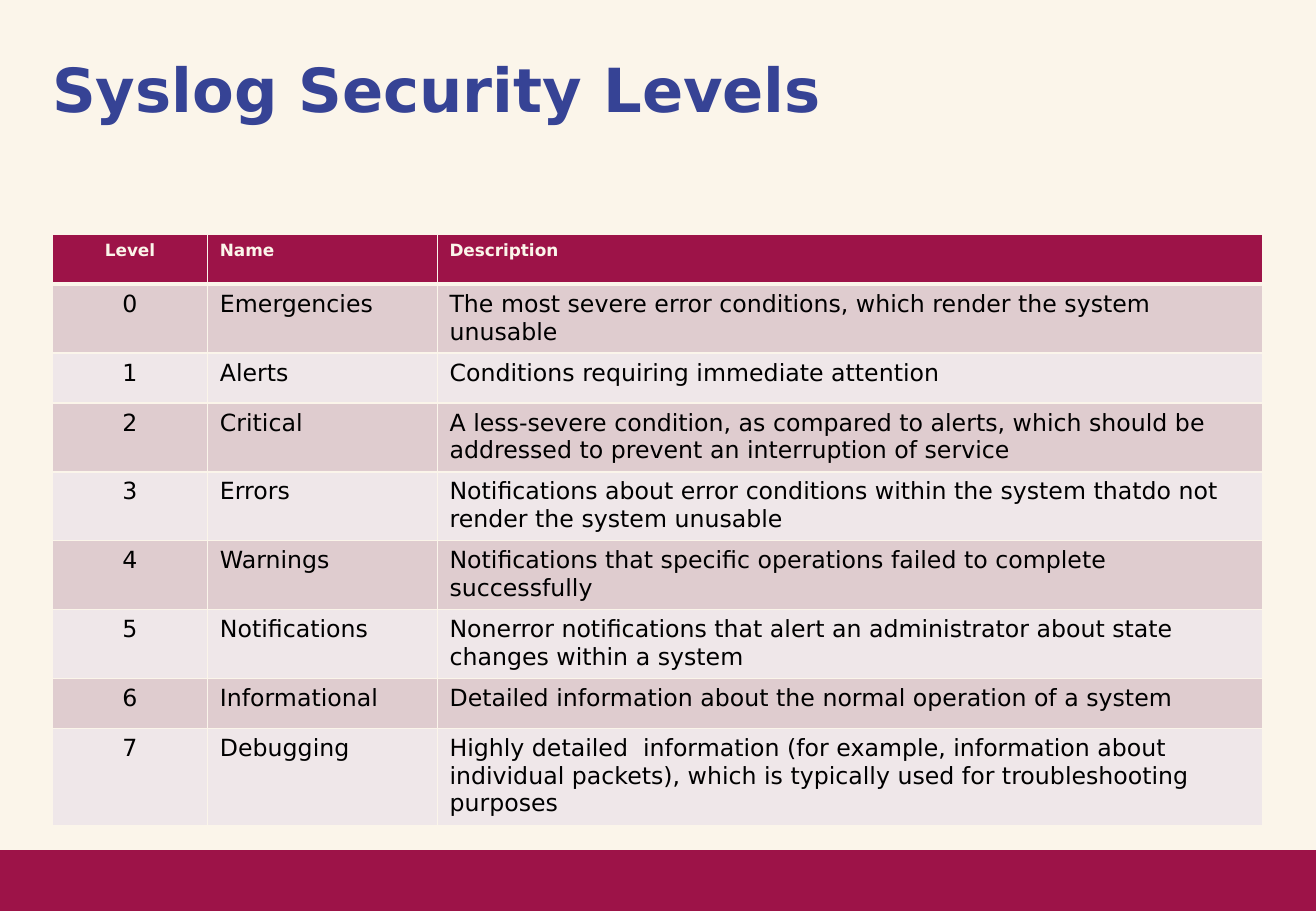
from pptx import Presentation
from pptx.dml.color import RGBColor
from pptx.enum.shapes import MSO_SHAPE
from pptx.enum.text import MSO_ANCHOR, PP_ALIGN
from pptx.oxml.ns import qn
from pptx.util import Inches, Pt
from lxml import etree

RECT = MSO_SHAPE.RECTANGLE
TOP = MSO_ANCHOR.TOP
LEFT, CENTER = PP_ALIGN.LEFT, PP_ALIGN.CENTER

CREAM = RGBColor(0xFB, 0xF5, 0xEA)
WINE = RGBColor(0x9D, 0x13, 0x48)
BLUE = RGBColor(0x36, 0x43, 0x95)
BLACK = RGBColor(0, 0, 0)
ROSE = RGBColor(0xDF, 0xCC, 0xCF)
PALE = RGBColor(0xEF, 0xE7, 0xE9)

WIDTHS = (1.28, 1.89, 6.79)
ROW = 0.41
HEADS = ("Level", "Name", "Description")
LEVELS = (
    ("Emergencies", "The most severe error conditions, which render the system unusable"),
    ("Alerts", "Conditions requiring immediate attention"),
    ("Critical", "A less-severe condition, as compared to alerts, which should be "
                 "addressed to prevent an interruption of service"),
    ("Errors", "Notifications about error conditions within the system thatdo not "
               "render the system unusable"),
    ("Warnings", "Notifications that specific operations failed to complete successfully"),
    ("Notifications", "Nonerror notifications that alert an administrator about state "
                      "changes within a system"),
    ("Informational", "Detailed information about the normal operation of a system"),
    ("Debugging", "Highly detailed  information (for example, information about "
                  "individual packets), which is typically used for troubleshooting purposes"),
)


class Deck:
    font = "DejaVu Sans"

    def __init__(self, wide, high):
        self.prs = Presentation()
        self.prs.slide_width = Inches(wide)
        self.prs.slide_height = Inches(high)
        self.slide = self.prs.slides.add_slide(self.prs.slide_layouts[6])
        fill = self.slide.background.fill
        fill.solid()
        fill.fore_color.rgb = CREAM

    def label(self, frame, text, size, color, bold=False, align=LEFT):
        frame.text = text
        para = frame.paragraphs[0]
        para.alignment = align
        font = para.runs[0].font
        font.name = self.font
        font.size = Pt(size)
        font.bold = bold
        font.color.rgb = color

    def bar(self, x, y, w, h, color):
        shape = self.slide.shapes.add_shape(RECT, Inches(x), Inches(y), Inches(w), Inches(h))
        shape.shadow.inherit = False
        shape.fill.solid()
        shape.fill.fore_color.rgb = color
        shape.line.fill.background()

    def title(self, x, y, w, h, text):
        box = self.slide.shapes.add_textbox(Inches(x), Inches(y), Inches(w), Inches(h))
        frame = box.text_frame
        frame.word_wrap = True
        frame.vertical_anchor = TOP
        frame.margin_left = frame.margin_right = 0
        frame.margin_top = frame.margin_bottom = 0
        self.label(frame, text, 36, BLUE, bold=True)

    def edge(self, cell, tag, width):
        props = cell._tc.get_or_add_tcPr()
        line = etree.SubElement(props, qn("a:" + tag), w=str(Pt(width)))
        solid = etree.SubElement(line, qn("a:solidFill"))
        etree.SubElement(solid, qn("a:srgbClr"), val=str(CREAM))

    def cell(self, cell, text, head, fill, align, over, under):
        for tag, width in (("lnL", 1), ("lnR", 1), ("lnT", over), ("lnB", under)):
            self.edge(cell, tag, width)
        cell.fill.solid()
        cell.fill.fore_color.rgb = fill
        size, color = (10, CREAM) if head else (14, BLACK)
        self.label(cell.text_frame, text, size, color, head, align)

    def table(self, x, y, rows):
        frame = self.slide.shapes.add_table(
            len(rows), len(WIDTHS), Inches(x), Inches(y),
            Inches(sum(WIDTHS)), Inches(ROW * len(rows)))
        table = frame.table
        for col, width in zip(table.columns, WIDTHS):
            col.width = Inches(width)
        for r, row in enumerate(rows):
            table.rows[r].height = Inches(ROW)
            head = r == 0
            fill = WINE if head else (ROSE if r % 2 else PALE)
            over = 3 if r == 1 else 1
            under = 3 if head else 1
            for c, text in enumerate(row):
                align = LEFT if c else CENTER
                self.cell(table.cell(r, c), text, head, fill, align, over, under)


def main():
    deck = Deck(10.83, 7.5)
    deck.bar(0, 7, 10.83, 0.5, WINE)
    deck.title(0.43, 0.43, 9.96, 1.25, "Syslog Security Levels")
    rows = [HEADS] + [(str(n), *level) for n, level in enumerate(LEVELS)]
    deck.table(0.43, 1.93, rows)
    deck.prs.save("out.pptx")


if __name__ == "__main__":
    main()
